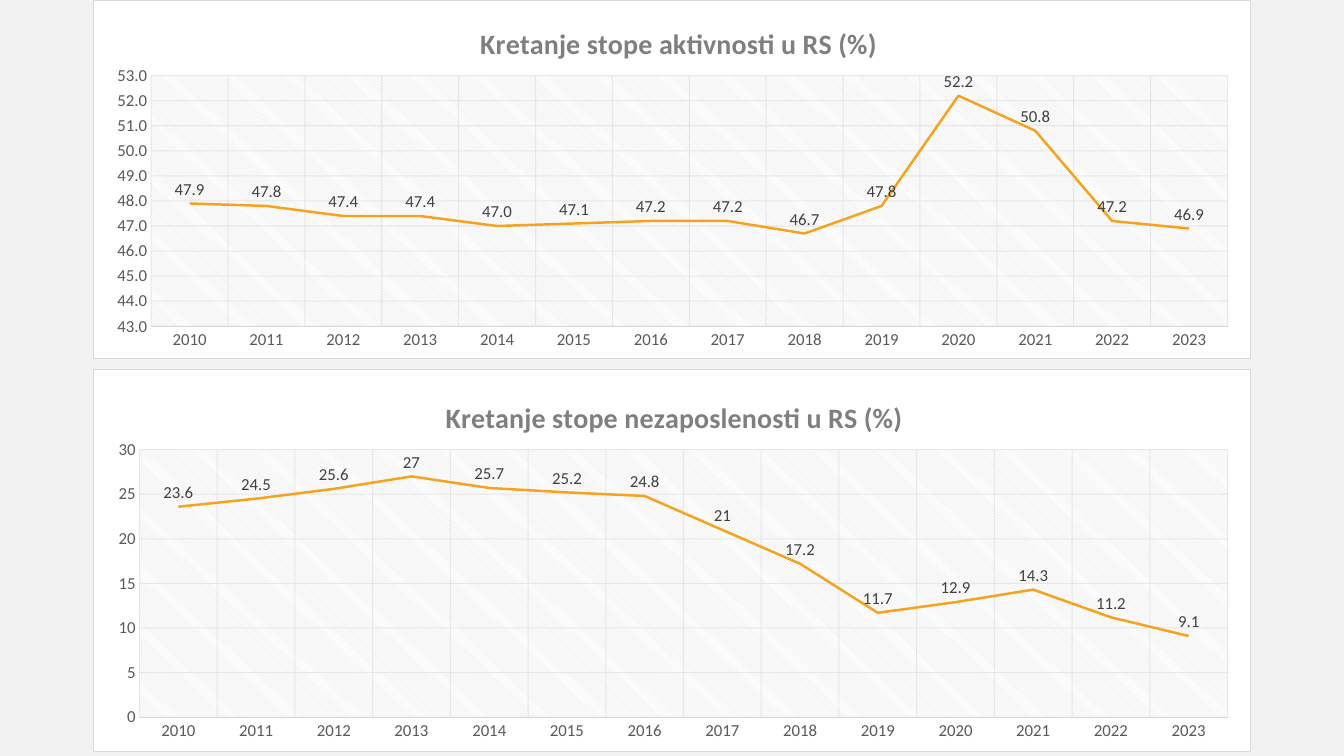
from lxml.etree import SubElement as Sub
from pptx import Presentation
from pptx.chart.data import CategoryChartData as Data
from pptx.dml.color import RGBColor as RGB
from pptx.enum.chart import XL_CHART_TYPE as Kind, XL_LABEL_POSITION as Pos, XL_TICK_MARK as Tick
from pptx.oxml import parse_xml
from pptx.oxml.ns import nsdecls, qn
from pptx.util import Inches, Pt

INK = {"back": "F2F2F2", "white": "FFFFFF", "rule": "D9D9D9", "line": "F6A21D",
       "title": "7F7F7F", "axis": "595959", "label": "404040"}
WIDE, HIGH = Inches(13.33), Inches(7.5)
LEFT, SPAN = 0.069, 0.862
FACE = "Calibri"
YEARS = [str(year) for year in range(2010, 2024)]
ACTIVE = [47.9, 47.8, 47.4, 47.4, 47, 47.1, 47.2, 47.2, 46.7, 47.8, 52.2, 50.8, 47.2, 46.9]
JOBLESS = [23.6, 24.5, 25.6, 27, 25.7, 25.2, 24.8, 21, 17.2, 11.7, 12.9, 14.3, 11.2, 9.1]


def tint(name):
    return RGB.from_string(INK[name])


def style(font, size, name, bold=False):
    font.name, font.size, font.bold = FACE, Pt(size), bold
    font.color.rgb = tint(name)


def stroke(line, name, width):
    line.color.rgb = tint(name)
    line.width = Pt(width)


def place(node, index, **parts):
    for old in node.findall(qn("c:layout")):
        node.remove(old)
    box = parse_xml(f'<c:layout {nsdecls("c")}/>')
    frame = Sub(box, qn("c:manualLayout"))
    if "w" in parts:
        Sub(frame, qn("c:layoutTarget")).set("val", "inner")
    for side in "xy":
        Sub(frame, qn(f"c:{side}Mode")).set("val", "edge")
    for key, share in parts.items():
        Sub(frame, qn(f"c:{key}")).set("val", str(share))
    node.insert(index, box)


def paint(fill, edge=""):
    return parse_xml(f'<c:spPr {nsdecls("c", "a")}>{fill}{edge}</c:spPr>')


def solid(name):
    return f'<a:solidFill><a:srgbClr val="{INK[name]}"/></a:solidFill>'


def set_axis(axis):
    axis.major_tick_mark = axis.minor_tick_mark = Tick.NONE
    style(axis.tick_labels.font, 12, "axis")
    axis.has_major_gridlines = True
    grid = axis.major_gridlines
    stroke(grid.format.line, "rule", 0.75)
    for shade in grid.format.line.fill._xPr.iter(qn("a:srgbClr")):
        Sub(shade, qn("a:alpha")).set("val", "54000")


def set_title(chart, text, spot):
    chart.has_title = True
    frame = chart.chart_title.text_frame
    frame.text = text
    style(frame.paragraphs[0].runs[0].font, 20, "title", True)
    place(chart.element.find(".//" + qn("c:title")), 1, x=spot[0], y=spot[1])


def set_back(chart):
    root = chart.element
    edge = f'<a:ln w="{Pt(0.75)}">{solid("rule")}</a:ln>'
    root.find(qn("c:chart")).addnext(paint(solid("white"), edge))
    weave = (f'<a:pattFill prst="ltDnDiag"><a:fgClr><a:srgbClr val="{INK["rule"]}"/></a:fgClr>'
             f'<a:bgClr><a:srgbClr val="{INK["white"]}"/></a:bgClr></a:pattFill>')
    root.find(".//" + qn("c:plotArea")).append(paint(weave))


def add_trend(slide, text, rates, top, tall, scale, form, spot, area):
    data = Data(number_format=form)
    data.categories = YEARS
    data.add_series("Series 1", rates)
    chart = slide.shapes.add_chart(Kind.LINE, int(WIDE * LEFT), int(HIGH * top),
                                   int(WIDE * SPAN), int(HIGH * tall), data).chart
    chart.has_legend = False
    chart.font.name, chart.font.size = FACE, Pt(10)
    set_title(chart, text, spot)

    years, values = chart.category_axis, chart.value_axis
    for axis in (years, values):
        set_axis(axis)
    stroke(years.format.line, "rule", 0.75)
    values.format.line.fill.background()
    values.minimum_scale, values.maximum_scale, values.major_unit = scale
    values.tick_labels.number_format = form
    values.tick_labels.number_format_is_linked = False

    plot = chart.plots[0]
    plot.vary_by_categories = False
    trend = plot.series[0]
    trend.smooth = False
    stroke(trend.format.line, "line", 1.75)
    labels = trend.data_labels
    labels.show_value = True
    labels.position = Pos.ABOVE
    labels.number_format = form
    labels.number_format_is_linked = False
    style(labels.font, 12, "label")

    place(chart.element.find(".//" + qn("c:plotArea")), 0, **area)
    set_back(chart)


def main():
    deck = Presentation()
    deck.slide_width, deck.slide_height = WIDE, HIGH
    slide = deck.slides.add_slide(deck.slide_layouts[6])
    fill = slide.background.fill
    fill.solid()
    fill.fore_color.rgb = tint("back")
    add_trend(slide, "Kretanje stope aktivnosti u RS (%)", ACTIVE, 0, 0.475,
              (43, 53, 1), "0.0", (0.33, 0.05), dict(x=0.05, y=0.21, w=0.93, h=0.7))
    add_trend(slide, "Kretanje stope nezaposlenosti u RS (%)", JOBLESS, 0.488, 0.507,
              (0, 30, 5), "General", (0.3, 0.06), dict(x=0.04, y=0.21, w=0.94, h=0.7))
    deck.save("out.pptx")


if __name__ == "__main__":
    main()
